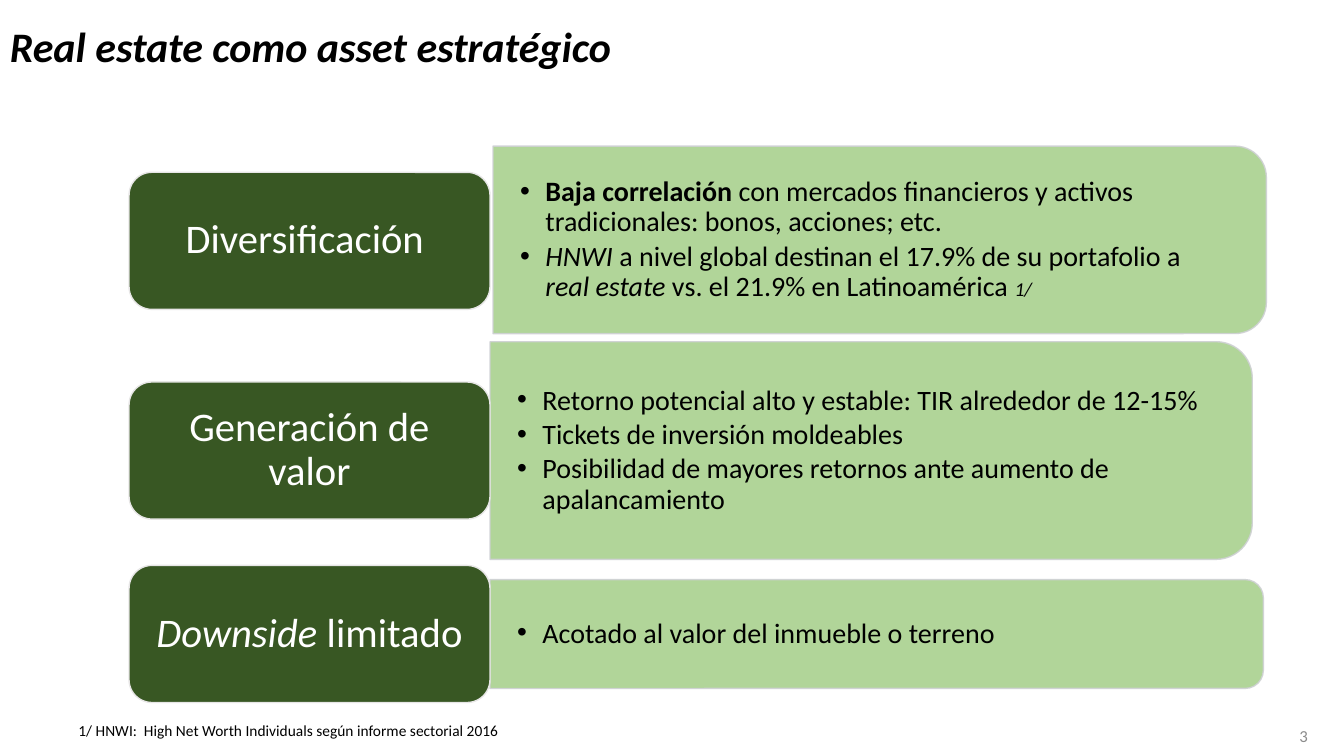
from dataclasses import dataclass

from lxml.etree import SubElement
from pptx import Presentation
from pptx.dml.color import RGBColor
from pptx.enum.shapes import MSO_SHAPE as SHAPE
from pptx.enum.text import MSO_ANCHOR as ANCHOR, PP_ALIGN as ALIGN
from pptx.oxml.ns import qn
from pptx.util import Inches, Pt

BLACK = RGBColor(0x00, 0x00, 0x00)
WHITE = RGBColor(0xFF, 0xFF, 0xFF)
GRAY = RGBColor(0x8C, 0x8C, 0x8C)
DARK_GREEN = RGBColor(0x38, 0x57, 0x23)
LIGHT_GREEN = RGBColor(0xA9, 0xD1, 0x8E)
LABEL_EDGE = RGBColor(0xE7, 0xE6, 0xE6)
PANEL_EDGE = RGBColor(0xCF, 0xD1, 0xD4)

LABEL_LEFT, LABEL_WIDTH, LABEL_HEIGHT = 1.28, 3.58, 1.36
CORNER_INSET = 0.05
BOLD = {"bold": True}
ITALIC = {"italic": True}


@dataclass
class Run:
    text: str
    fmt: dict


@dataclass
class Box:
    left: float
    top: float
    width: float
    height: float

    def lengths(self) -> list:
        return [Inches(v) for v in (self.left, self.top, self.width, self.height)]


@dataclass
class Block:
    label: list[Run]
    label_top: float
    panel: Box
    bullets: list[list[Run]]


BLOCKS = [
    Block([Run("Diversificación ", {})], 1.71, Box(4.89, 1.45, 7.67, 1.86), [
        [Run("Baja correlación", BOLD),
         Run(" con mercados financieros y activos tradicionales: bonos, acciones; etc.", {})],
        [Run("HNWI", ITALIC),
         Run(" a nivel global destinan el 17.9% de su portafolio a ", {}),
         Run("real estate ", ITALIC),
         Run("vs. el 21.9% en Latinoamérica ", {}),
         Run("1/", {"italic": True, "size": Pt(14)})],
    ]),
    Block([Run("Generación de valor", {})], 3.79, Box(4.86, 3.39, 7.56, 2.16), [
        [Run("Retorno potencial alto y estable: TIR alrededor de 12-15%", {})],
        [Run("Tickets de inversión moldeables", {})],
        [Run("Posibilidad de mayores retornos ante aumento de apalancamiento", {})],
    ]),
    Block([Run("Downside", ITALIC), Run(" limitado", {})], 5.61, Box(4.86, 5.75, 7.67, 1.08), [
        [Run("Acotado al valor del inmueble o terreno", {})],
    ]),
]


def write(tf, paragraphs: list[list[Run]], size: float, color: RGBColor,
          margins: tuple = (0.1, 0.05), anchor=ANCHOR.MIDDLE, **par_fmt) -> None:
    mx, my = (Inches(m) for m in margins)
    frame = {"word_wrap": True, "vertical_anchor": anchor, "margin_left": mx,
             "margin_right": mx, "margin_top": my, "margin_bottom": my}
    for name, value in frame.items():
        setattr(tf, name, value)
    for i, runs in enumerate(paragraphs):
        p = tf.add_paragraph() if i else tf.paragraphs[0]
        for name, value in par_fmt.items():
            setattr(p, name, value)
        for run in runs:
            r = p.add_run()
            r.text = run.text
            r.font.color.rgb = color
            for name, value in ({"name": "Calibri", "size": Pt(size)} | run.fmt).items():
                setattr(r.font, name, value)


def add_text(s, box: Box, paragraphs: list[list[Run]], size: float, color: RGBColor, **fmt):
    tf = s.shapes.add_textbox(*box.lengths()).text_frame
    write(tf, paragraphs, size, color, **fmt)
    return tf


def add_shape(s, kind, box: Box, fill: RGBColor, edge: RGBColor):
    sp = s.shapes.add_shape(kind, *box.lengths())
    sp.shadow.inherit = False
    sp.fill.solid()
    sp.fill.fore_color.rgb = fill
    sp.line.color.rgb = edge
    sp.line.width = Pt(1)
    return sp


def add_panel(s, panel: Box, bullets: list[list[Run]]) -> None:
    w, h = panel.width, panel.height
    upright = Box(panel.left + (w - h) / 2, panel.top - (w - h) / 2, h, w)
    sp = add_shape(s, SHAPE.ROUND_2_SAME_RECTANGLE, upright, LIGHT_GREEN, PANEL_EDGE)
    sp.rotation = 90
    for color in sp._element.spPr.iter(qn("a:srgbClr")):
        SubElement(color, qn("a:alpha"), val="90000")
    inset = CORNER_INSET * h
    tf = add_text(s, Box(panel.left, panel.top + inset, w - inset, h - 2 * inset),
                  bullets, 20, BLACK, margins=(0.27, 0.14),
                  line_spacing=0.9, space_after=Pt(3))
    for p in tf.paragraphs:
        pPr = p._p.get_or_add_pPr()
        pPr.set("marL", str(Inches(0.25)))
        pPr.set("indent", str(Inches(-0.25)))
        SubElement(pPr, qn("a:buFont"), typeface="Arial")
        SubElement(pPr, qn("a:buChar"), char="•")


def add_block(s, block: Block) -> None:
    add_panel(s, block.panel, block.bullets)
    box = Box(LABEL_LEFT, block.label_top, LABEL_WIDTH, LABEL_HEIGHT)
    sp = add_shape(s, SHAPE.ROUNDED_RECTANGLE, box, DARK_GREEN, LABEL_EDGE)
    write(sp.text_frame, [block.label], 29, WHITE, margins=(0.12, 0.06),
          alignment=ALIGN.CENTER, line_spacing=0.9)


def main() -> None:
    prs = Presentation()
    prs.slide_width, prs.slide_height = Inches(13.33), Inches(7.5)
    s = prs.slides.add_slide(prs.slide_layouts[6])
    add_text(s, Box(0, 0, 12.9, 0.97),
             [[Run("Real estate como asset estratégico", BOLD | ITALIC)]],
             30, BLACK, line_spacing=0.9)
    for block in BLOCKS:
        add_block(s, block)
    add_text(s, Box(9.96, 7.1, 3.11, 0.4), [[Run("3", {})]], 12, GRAY, alignment=ALIGN.RIGHT)
    add_text(s, Box(0.68, 7.1, 8.2, 0.29),
             [[Run("1/ HNWI:  High Net Worth Individuals según informe sectorial 2016", {})]],
             11, BLACK, anchor=ANCHOR.TOP)
    prs.save("out.pptx")


if __name__ == "__main__":
    main()
